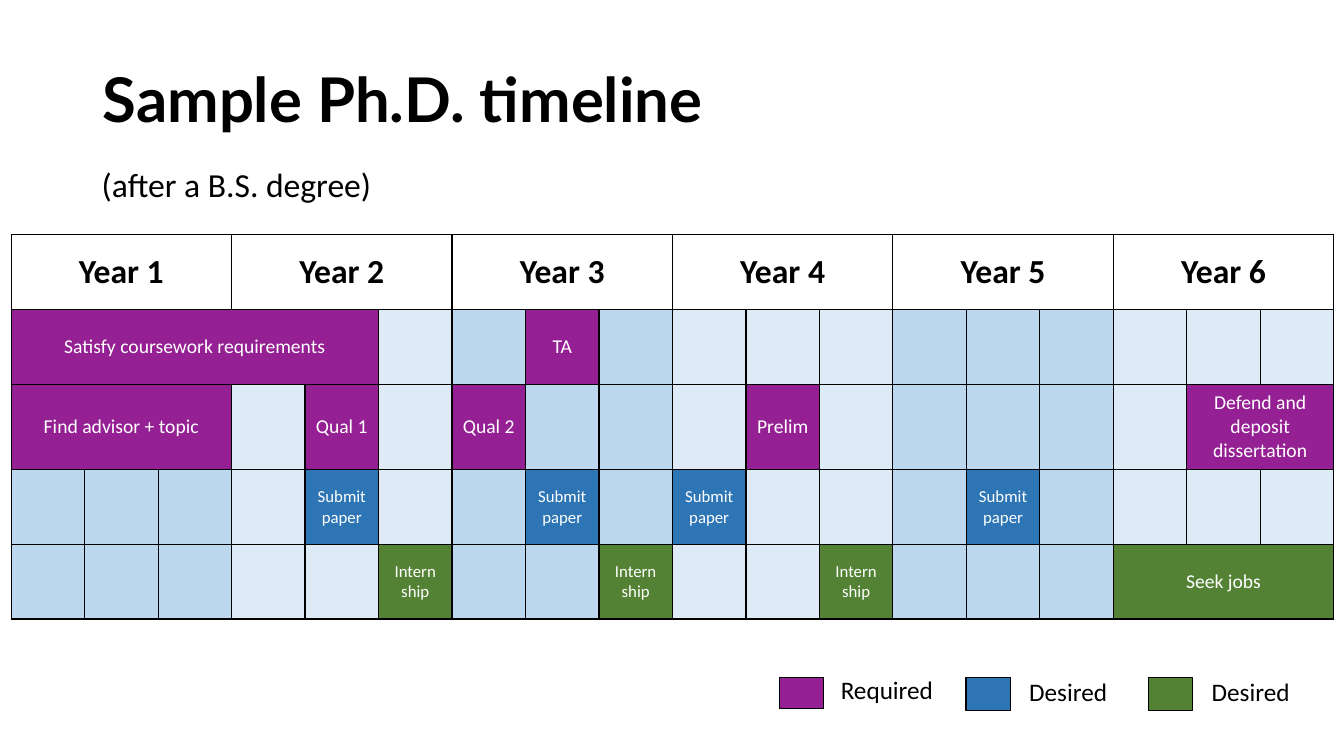
from dataclasses import dataclass

from lxml import etree
from pptx import Presentation
from pptx import util as u
from pptx.dml.color import RGBColor
from pptx.enum import shapes, text
from pptx.oxml import ns

WIDTH, HEIGHT = 13.33, 7.5
YEARS, TERMS = 6, 3
COLORS = {
    "black": "000000", "white": "FFFFFF",
    "odd_year": "BDD7EE", "even_year": "DEEBF7",
    "required": "942093", "paper": "2E75B6", "career": "548235",
}


@dataclass
class Box:
    """A place on the slide, in percent of its width and height."""
    left: float
    top: float
    width: float
    height: float

    def emu(self) -> tuple:
        return (u.Inches(WIDTH * self.left / 100), u.Inches(HEIGHT * self.top / 100),
                u.Inches(WIDTH * self.width / 100), u.Inches(HEIGHT * self.height / 100))


@dataclass
class Milestone:
    """A filled table cell; row and column are counted from 0."""
    label: str
    row: int
    col: int
    color: str
    span: int = 1
    size: int = 14


@dataclass
class LegendItem:
    label: str
    color: str
    swatch: Box
    caption: Box


TITLE = Box(6.9, 3.87, 86.27, 19.33)
SUBTITLE = Box(6.83, 21.07, 21.83, 6.67)
TIMELINE = Box(0.83, 31.07, 98.42, 50.8)
ROW_HEIGHTS = [9.87, 9.87, 11.33, 9.87, 9.87]

MILESTONES = [
    Milestone("Satisfy coursework requirements", 1, 0, "required", span=5),
    Milestone("TA", 1, 7, "required"),
    Milestone("Find advisor + topic", 2, 0, "required", span=3),
    Milestone("Qual 1", 2, 4, "required"),
    Milestone("Qual 2", 2, 6, "required"),
    Milestone("Prelim", 2, 10, "required"),
    Milestone("Defend and deposit dissertation", 2, 16, "required", span=2),
    *[Milestone("Submit paper", 3, col, "paper", size=12) for col in (4, 7, 9, 13)],
    *[Milestone("Intern ship", 4, col, "career", size=12) for col in (5, 8, 11)],
    Milestone("Seek jobs", 4, 15, "career", span=3),
]

LEGEND = [
    LegendItem("Required", "required", Box(57.99, 89.6, 3.3, 4.13), Box(61.82, 88.53, 8.48, 5.33)),
    LegendItem("Desired", "paper", Box(71.87, 89.6, 3.3, 4.4), Box(75.84, 88.8, 7.35, 5.33)),
    LegendItem("Desired", "career", Box(85.45, 89.6, 3.3, 4.4), Box(89.42, 88.8, 7.35, 5.33)),
]


def rgb(name: str) -> RGBColor:
    return RGBColor.from_string(COLORS[name])


def write(tf, label: str, size: int, color: str = "black", bold: bool = False,
          font: str = "Calibri", align=text.PP_ALIGN.LEFT):
    tf.text = label
    p = tf.paragraphs[0]
    p.alignment = align
    f = p.runs[0].font
    f.name, f.size, f.bold = font, u.Pt(size), bold
    f.color.rgb = rgb(color)
    return p


def add_title(slide) -> None:
    sp = slide.shapes.title
    sp.left, sp.top, sp.width, sp.height = TITLE.emu()
    sp.text_frame.vertical_anchor = text.MSO_ANCHOR.MIDDLE
    p = write(sp.text_frame, "Sample Ph.D. timeline", 44, bold=True, font="Lato")
    p.line_spacing = 0.9


def add_label(slide, label: str, box: Box, size: int) -> None:
    tf = slide.shapes.add_textbox(*box.emu()).text_frame
    tf.word_wrap = False
    tf.auto_size = text.MSO_AUTO_SIZE.SHAPE_TO_FIT_TEXT
    write(tf, label, size)


def add_borders(cell) -> None:
    tc_pr = cell._tc.get_or_add_tcPr()
    for side in ("a:lnL", "a:lnR", "a:lnT", "a:lnB"):
        ln = etree.SubElement(tc_pr, ns.qn(side), w=str(u.Pt(1)))
        fill = etree.SubElement(ln, ns.qn("a:solidFill"))
        etree.SubElement(fill, ns.qn("a:srgbClr"), val=COLORS["black"])


def fill_cell(cell, color: str) -> None:
    cell.fill.solid()
    cell.fill.fore_color.rgb = rgb(color)


def label_cells(table, row: int, col: int, span: int, label: str, **style):
    """Merge span cells to the right of a position and centre a label there."""
    cell = table.cell(row, col)
    if span > 1:
        cell.merge(table.cell(row, col + span - 1))
    cell.vertical_anchor = text.MSO_ANCHOR.MIDDLE
    write(cell.text_frame, label, align=text.PP_ALIGN.CENTER, **style)
    return cell


def add_timeline(slide) -> None:
    columns = YEARS * TERMS
    table = slide.shapes.add_table(len(ROW_HEIGHTS), columns, *TIMELINE.emu()).table
    table.first_row = table.horz_banding = False
    for row, height in zip(table.rows, ROW_HEIGHTS):
        row.height = u.Inches(HEIGHT * height / 100)
    for col in table.columns:
        col.width = u.Inches(WIDTH * TIMELINE.width / 100 / columns)

    for r, row in enumerate(table.rows):
        for c, cell in enumerate(row.cells):
            add_borders(cell)
            if r == 0:
                cell.fill.background()
            else:
                fill_cell(cell, "even_year" if c // TERMS % 2 else "odd_year")

    for year in range(YEARS):
        label_cells(table, 0, year * TERMS, TERMS, f"Year {year + 1}", size=24, bold=True)
    for m in MILESTONES:
        cell = label_cells(table, m.row, m.col, m.span, m.label, size=m.size, color="white")
        fill_cell(cell, m.color)


def add_legend_item(slide, item: LegendItem) -> None:
    sp = slide.shapes.add_shape(shapes.MSO_SHAPE.RECTANGLE, *item.swatch.emu())
    sp.shadow.inherit = False
    sp.fill.solid()
    sp.fill.fore_color.rgb = rgb(item.color)
    sp.line.color.rgb = rgb("black")
    sp.line.width = u.Pt(1)
    add_label(slide, item.label, item.caption, 18)


def main() -> None:
    prs = Presentation()
    prs.slide_width, prs.slide_height = u.Inches(WIDTH), u.Inches(HEIGHT)
    slide = prs.slides.add_slide(prs.slide_layouts.get_by_name("Title Only"))
    add_title(slide)
    add_timeline(slide)
    for item in LEGEND:
        add_legend_item(slide, item)
    add_label(slide, "(after a B.S. degree)", SUBTITLE, 24)
    prs.save("out.pptx")


if __name__ == "__main__":
    main()
